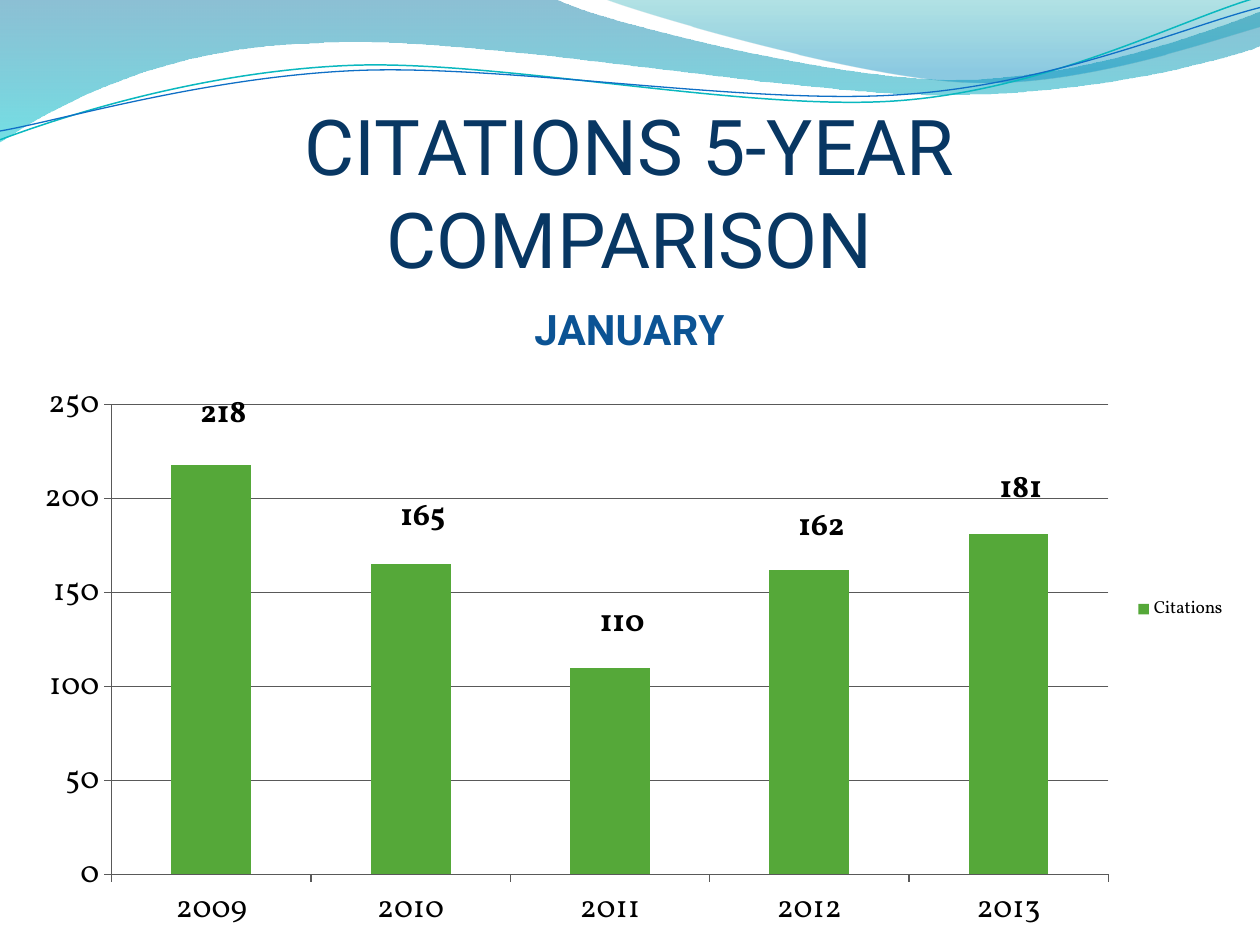
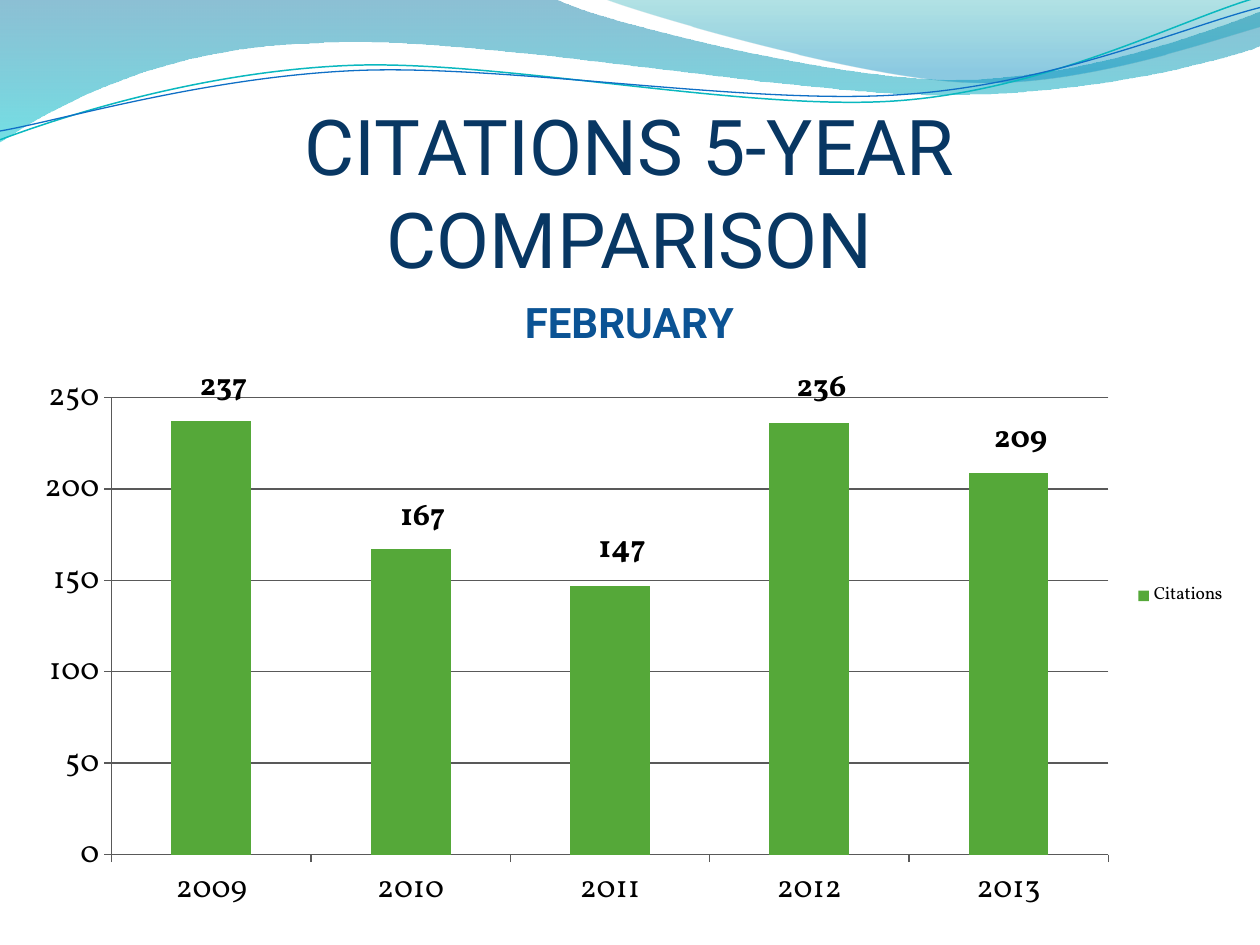
from lxml import etree
from pptx import Presentation
from pptx import util as u
from pptx.chart import data
from pptx.dml.color import RGBColor
from pptx.enum import chart as ce
from pptx.enum import text
from pptx.oxml.ns import qn

NAVY = RGBColor(0x08, 0x37, 0x63)
BLUE = RGBColor(0x0B, 0x53, 0x94)
GREEN = RGBColor(0x55, 0xA8, 0x39)
BLACK = RGBColor(0, 0, 0)
GRID = RGBColor(0x59, 0x59, 0x59)
TEAL_LINE = RGBColor(0x0A, 0xB8, 0xBF)
BLUE_LINE = RGBColor(0x0F, 0x6F, 0xC6)
HEADING_FONT = "Roboto"
CHART_FONT = "Vollkorn"

YEARS = ["2009", "2010", "2011", "2012", "2013"]
MONTHS = [
    ("JANUARY", 2.17, 5.33, [218, 165, 110, 162, 181],
     [0.38, 0.3, 0.22, 0.29, 0.32]),
    ("FEBRUARY", 2.12, 5.22, [237, 167, 147, 236, 209],
     [0.38, 0.28, 0.26, 0.38, 0.34]),
]

WIDE_WAVE = [
    (0, 0), (4.4, -0.01),
    (4.76, 0.17, 6.64, 0.63, 7.58, 0.63), (8.53, 0.63, 9.58, 0.26, 10, 0.09),
    (10.01, 0.36),
    (9.83, 0.44, 8.7, 0.76, 7.46, 0.75), (6.22, 0.75, 3.82, 0.28, 2.57, 0.34),
    (1.29, 0.36, 0.46, 0.83, -0.01, 1.13),
]
RIGHT_WAVE = [
    (4.79, -0.01),
    (5.09, 0.11, 6.82, 0.62, 7.69, 0.65), (8.56, 0.69, 9.61, 0.32, 10, 0.21),
    (10, 0),
]
TEAL_CURVE = [
    (0, 1.11),
    (0.48, 0.93, 1.58, 0.57, 2.77, 0.52), (3.95, 0.47, 5.93, 0.89, 7.13, 0.8),
    (8.33, 0.71, 9.38, 0.15, 9.98, -0.02),
]
BLUE_CURVE = [
    (0, 1.04),
    (0.47, 0.96, 1.64, 0.61, 2.83, 0.56), (4.03, 0.51, 5.97, 0.84, 7.17, 0.75),
    (8.36, 0.67, 9.41, 0.21, 10, 0.06),
]
WIDE_STOPS = [(0, RGBColor(0, 0x74, 0xA1), 45), (1, RGBColor(0, 0xC6, 0xCF), 55)]
RIGHT_STOPS = [(0, RGBColor(0, 0xA1, 0xA9), 30), (0.8, RGBColor(0, 0x8B, 0xBF), 45)]


def set_font(font, size, color, name, bold=False):
    font.size = u.Pt(size)
    font.color.rgb = color
    font.name = name
    font.bold = bold


def write(frame, words, align=text.PP_ALIGN.CENTER, **style):
    paragraph = frame.paragraphs[0]
    paragraph.text = words
    paragraph.alignment = align
    for run in paragraph.runs:
        set_font(run.font, **style)


def bend(shape, segments):
    corners = iter(list(shape.element.iter(qn("a:lnTo"))))
    for segment in segments:
        first = next(corners)
        if len(segment) == 6:
            first.tag = qn("a:cubicBezTo")
            for _ in range(2):
                corner = next(corners)
                first.append(corner[0])
                corner.getparent().remove(corner)


class Deck:
    def __init__(self):
        self.prs = Presentation()
        self.prs.slide_width = u.Inches(10)
        self.prs.slide_height = u.Inches(7.5)
        self.layout = self.prs.slide_layouts[5]
        self.slide = None

    def new_slide(self):
        self.slide = self.prs.slides.add_slide(self.layout)

    def outline(self, path, closed):
        points = [(u.Inches(segment[i]), u.Inches(segment[i + 1]))
                  for segment in path for i in range(0, len(segment), 2)]
        builder = self.slide.shapes.build_freeform(*points[0], scale=1.0)
        builder.add_line_segments(points[1:], close=closed)
        shape = builder.convert_to_shape()
        bend(shape, path[1:])
        shape.shadow.inherit = False
        return shape

    def move_to_layout(self, shape):
        shape.element.nvSpPr.cNvPr.id = 100 + len(self.layout.shapes)
        self.layout.shapes.element.append(shape.element)

    def wave(self, path, stops):
        shape = self.outline(path, True)
        shape.line.fill.background()
        shape.fill.gradient()
        shape.fill.gradient_angle = 270
        for stop, (position, color, _) in zip(shape.fill.gradient_stops, stops):
            stop.position = position
            stop.color.rgb = color
        for node, (_, _, opacity) in zip(shape.element.iter(qn("a:srgbClr")), stops):
            etree.SubElement(node, qn("a:alpha")).set("val", str(opacity * 1000))
        self.move_to_layout(shape)

    def curve(self, path, color, width):
        shape = self.outline(path, False)
        shape.fill.background()
        shape.line.color.rgb = color
        shape.line.width = u.Pt(width)
        self.move_to_layout(shape)

    def band(self):
        self.wave(WIDE_WAVE, WIDE_STOPS)
        self.wave(RIGHT_WAVE, RIGHT_STOPS)
        self.curve(TEAL_CURVE, TEAL_LINE, 0.85)
        self.curve(BLUE_CURVE, BLUE_LINE, 0.75)

    def title(self, words):
        heading = self.slide.shapes.title
        heading.left, heading.top = u.Inches(0.5), u.Inches(1)
        heading.width, heading.height = u.Inches(9), u.Inches(1.25)
        frame = heading.text_frame
        frame.margin_left = frame.margin_right = frame.margin_bottom = 0
        frame.margin_top = u.Inches(0.05)
        frame.vertical_anchor = text.MSO_ANCHOR.BOTTOM
        frame.auto_size = text.MSO_AUTO_SIZE.NONE
        frame.word_wrap = True
        write(frame, words, size=44, color=NAVY, name=HEADING_FONT)

    def citations_chart(self, month, top, height, counts, label_lifts):
        table = data.CategoryChartData()
        table.categories = YEARS
        table.add_series("Citations", counts)
        chart = self.slide.shapes.add_chart(
            ce.XL_CHART_TYPE.COLUMN_STACKED, u.Inches(0.16), u.Inches(top),
            u.Inches(9.67), u.Inches(height), table).chart
        set_font(chart.font, 10, BLACK, CHART_FONT)
        chart.has_title = True
        write(chart.chart_title.text_frame, month, size=24, color=BLUE,
              name=HEADING_FONT, bold=True)
        chart.has_legend = True
        chart.legend.position = ce.XL_LEGEND_POSITION.RIGHT
        chart.legend.include_in_layout = False
        self.axes(chart)
        plot = chart.plots[0]
        plot.gap_width, plot.overlap = 150, 100
        plot.vary_by_categories = False
        citations = plot.series[0]
        citations.format.fill.solid()
        citations.format.fill.fore_color.rgb = GREEN
        self.point_labels(chart, citations, label_lifts)

    def axes(self, chart):
        for axis in (chart.category_axis, chart.value_axis):
            set_font(axis.tick_labels.font, 18, BLACK, CHART_FONT)
            axis.major_tick_mark = ce.XL_TICK_MARK.OUTSIDE
            axis.format.line.color.rgb = GRID
            axis.format.line.width = u.Pt(0.75)
        counts = chart.value_axis
        counts.minimum_scale, counts.maximum_scale = 0, 250
        counts.major_unit = 50
        counts.has_major_gridlines = True
        counts.major_gridlines.format.line.color.rgb = GRID
        counts.major_gridlines.format.line.width = u.Pt(0.75)

    def point_labels(self, chart, series, lifts):
        series.data_labels.show_value = True
        set_font(series.data_labels.font, 18, BLACK, CHART_FONT, True)
        for index in range(len(lifts)):
            label = series.points[index].data_label
            set_font(label.font, 18, BLACK, CHART_FONT, True)
            label.position = ce.XL_LABEL_POSITION.CENTER
        for leader in chart.element.iter(qn("c:showLeaderLines")):
            leader.set("val", "0")
        for node, lift in zip(chart.element.iter(qn("c:dLbl")), lifts):
            layout = etree.Element(qn("c:layout"))
            manual = etree.SubElement(layout, qn("c:manualLayout"))
            for axis, shift in (("c:x", 0.01), ("c:y", -lift)):
                etree.SubElement(manual, qn(axis)).set("val", str(shift))
            node[0].addnext(layout)


def main():
    deck = Deck()
    for number, month in enumerate(MONTHS):
        deck.new_slide()
        if number == 0:
            deck.band()
        deck.title("CITATIONS 5-YEAR\vCOMPARISON")
        deck.citations_chart(*month)
    deck.prs.save("out.pptx")


if __name__ == "__main__":
    main()
